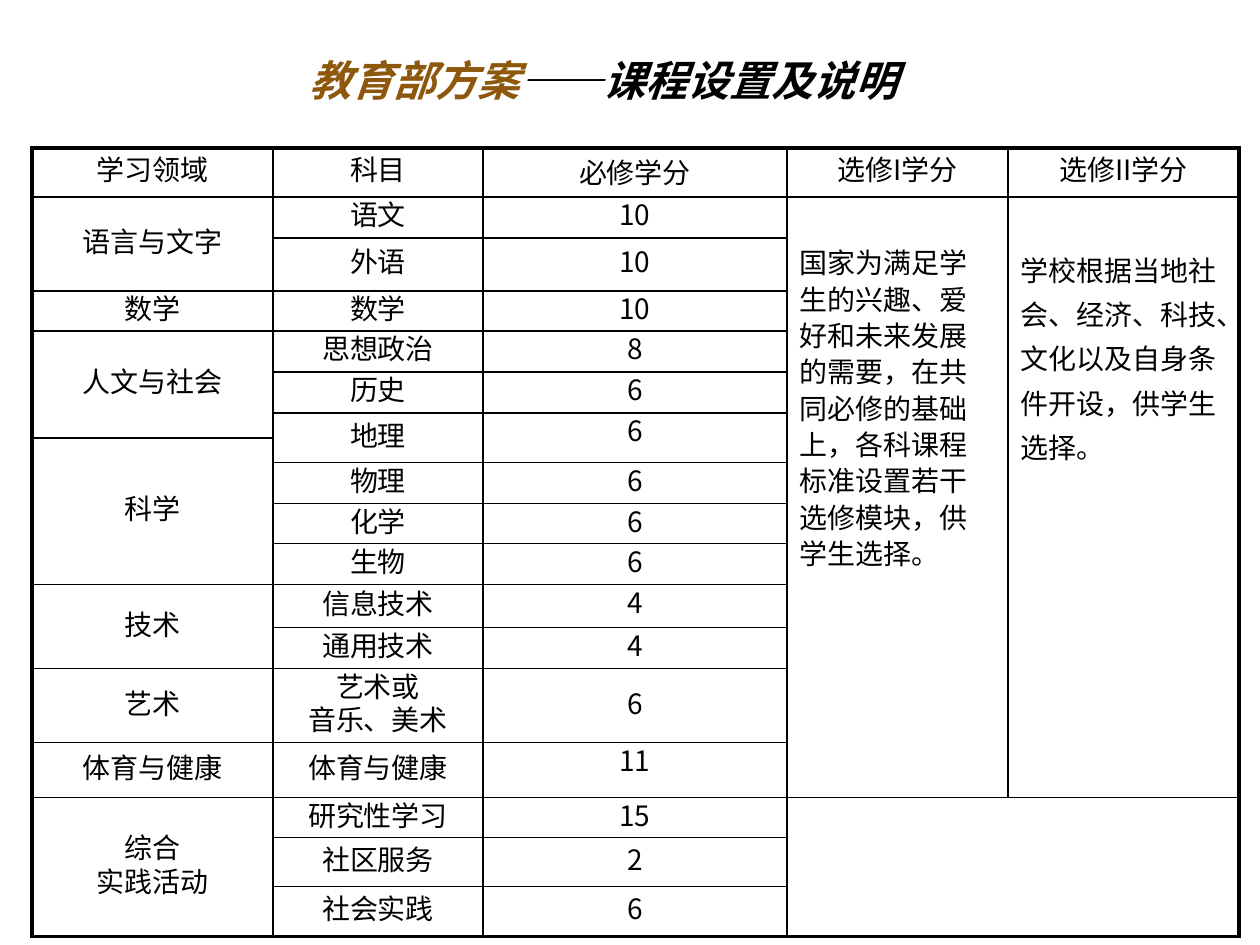
import pptx
import pptx.dml.color
import pptx.enum.text
import pptx.oxml.ns
import pptx.util
from lxml import etree

EMU_PER_PX = 914400 // 126
FONT = "Noto Sans CJK SC"
BLACK = "000000"
BROWN = "8E580C"
INNER_LINE, OUTER_LINE = 1, 2.25
ALIGN = pptx.enum.text.PP_ALIGN
ANCHOR = pptx.enum.text.MSO_ANCHOR

TABLE_LEFT, TABLE_TOP = 32, 148
COLUMN_WIDTHS = [241, 210, 304, 221, 231]
ROW_HEIGHTS = [49, 41, 53, 40, 41, 41, 25, 25, 41, 40, 41, 43, 41, 74, 55, 40, 49, 50]

# Each entry: text, rows spanned
AREAS = [("学习领域", 1), ("语言与文字", 2), ("数学", 1), ("人文与社会", 3), ("科学", 4),
         ("技术", 2), ("艺术", 1), ("体育与健康", 1), ("综合\n实践活动", 3)]
# Each entry: subject, required credits, rows spanned
SUBJECTS = [("科目", "必修学分", 1), ("语文", "10", 1), ("外语", "10", 1), ("数学", "10", 1),
            ("思想政治", "8", 1), ("历史", "6", 1), ("地理", "6", 2), ("物理", "6", 1),
            ("化学", "6", 1), ("生物", "6", 1), ("信息技术", "4", 1), ("通用技术", "4", 1),
            ("艺术或\n音乐、美术", "6", 1), ("体育与健康", "11", 1), ("研究性学习", "15", 1),
            ("社区服务", "2", 1), ("社会实践", "6", 1)]
TOP_ALIGNED_CREDITS = {"地理", "物理", "化学", "生物", "信息技术", "通用技术", "体育与健康", "研究性学习"}
ELECTIVE_ONE = "国家为满足学生的兴趣、爱好和未来发展的需要，在共同必修的基础上，各科课程标准设置若干选修模块，供学生选择。"
ELECTIVE_TWO = "学校根据当地社会、经济、科技、文化以及自身条件开设，供学生选择。"


def px(length):
    return pptx.util.Emu(length * EMU_PER_PX)


def rgb(value):
    return pptx.dml.color.RGBColor.from_string(value)


def add_text(paragraph, text, size=16, color=BLACK, bold=False, italic=False,
             align=ALIGN.LEFT, spacing=0.7, after=3.2):
    paragraph.alignment = align
    paragraph.line_spacing = spacing
    paragraph.space_after = pptx.util.Pt(after)
    run = paragraph.add_run()
    run.text = text
    font = run.font
    font.size = pptx.util.Pt(size)
    font.bold, font.italic = bold, italic
    font.color.rgb = rgb(color)
    font.name = FONT
    east_asian = etree.SubElement(run._r.get_or_add_rPr(), pptx.oxml.ns.qn("a:ea"))
    east_asian.set("typeface", FONT)


def add_title(slide):
    frame = slide.shapes.add_textbox(px(297), px(39), px(687), px(88)).text_frame
    frame.word_wrap = True
    frame.vertical_anchor = ANCHOR.MIDDLE
    for text, color in [("教育部方案", BROWN), ("——课程设置及说明", BLACK)]:
        add_text(frame.paragraphs[0], text, size=24, color=color,
                 bold=True, italic=True, spacing=0.9, after=0)


def set_border(cell, edge, width):
    qn = pptx.oxml.ns.qn
    line = etree.SubElement(cell._tc.get_or_add_tcPr(), qn(f"a:ln{edge}"),
                            w=str(pptx.util.Pt(width)))
    fill = etree.SubElement(line, qn("a:solidFill"))
    etree.SubElement(fill, qn("a:srgbClr"), val=BLACK)


def draw_borders(table, row, column, rows, columns):
    """Rule the edges of a merged region, heavier along the table's rim."""
    last_row, last_column = row + rows - 1, column + columns - 1
    rim = {"L": column == 0, "R": last_column == len(COLUMN_WIDTHS) - 1,
           "T": row == 0, "B": last_row == len(ROW_HEIGHTS) - 1}
    for r in range(row, last_row + 1):
        for c in range(column, last_column + 1):
            cell = table.cell(r, c)
            on_edge = {"L": c == column, "R": c == last_column,
                       "T": r == row, "B": r == last_row}
            for edge in "LRTB":
                if on_edge[edge] or (r, c) == (row, column):
                    set_border(cell, edge, OUTER_LINE if rim[edge] else INNER_LINE)
            cell.fill.background()


def fill_cell(table, row, column, text="", rows=1, columns=1,
              anchor=ANCHOR.MIDDLE, top=6, align=ALIGN.CENTER, spacing=0.7):
    cell = table.cell(row, column)
    if rows * columns > 1:
        cell.merge(table.cell(row + rows - 1, column + columns - 1))
    draw_borders(table, row, column, rows, columns)
    cell.vertical_anchor = anchor
    cell.margin_left = cell.margin_right = px(13)
    cell.margin_top, cell.margin_bottom = px(top), px(6)
    frame = cell.text_frame
    for index, line in enumerate(text.split("\n") if text else []):
        paragraph = frame.add_paragraph() if index else frame.paragraphs[0]
        add_text(paragraph, line, align=align, spacing=spacing)


def add_curriculum(slide):
    table = slide.shapes.add_table(
        len(ROW_HEIGHTS), len(COLUMN_WIDTHS), px(TABLE_LEFT), px(TABLE_TOP),
        px(sum(COLUMN_WIDTHS)), px(sum(ROW_HEIGHTS))).table
    table.first_row = table.horz_banding = False
    for column, width in zip(table.columns, COLUMN_WIDTHS):
        column.width = px(width)
    for row, height in zip(table.rows, ROW_HEIGHTS):
        row.height = px(height)

    row = 0
    for area, rows in AREAS:
        fill_cell(table, row, 0, area, rows=rows)
        row += rows

    row = 0
    for subject, credits, rows in SUBJECTS:
        anchor = ANCHOR.TOP if subject in TOP_ALIGNED_CREDITS else ANCHOR.MIDDLE
        fill_cell(table, row, 1, subject, rows=rows)
        fill_cell(table, row, 2, credits, rows=rows, anchor=anchor,
                  spacing=0.9 if row == 0 else 0.7)
        row += rows

    electives = [("选修I学分", ELECTIVE_ONE, 0.9), ("选修II学分", ELECTIVE_TWO, 1.1)]
    for column, (heading, description, spacing) in enumerate(electives, start=3):
        fill_cell(table, 0, column, heading)
        fill_cell(table, 1, column, description, rows=14, anchor=ANCHOR.TOP,
                  top=48, align=ALIGN.LEFT, spacing=spacing)
    fill_cell(table, 15, 3, rows=3, columns=2)


def main():
    presentation = pptx.Presentation()
    presentation.slide_width = px(1260)
    presentation.slide_height = px(945)
    slide = presentation.slides.add_slide(presentation.slide_layouts[6])
    add_title(slide)
    add_curriculum(slide)
    presentation.save("out.pptx")


if __name__ == "__main__":
    main()
